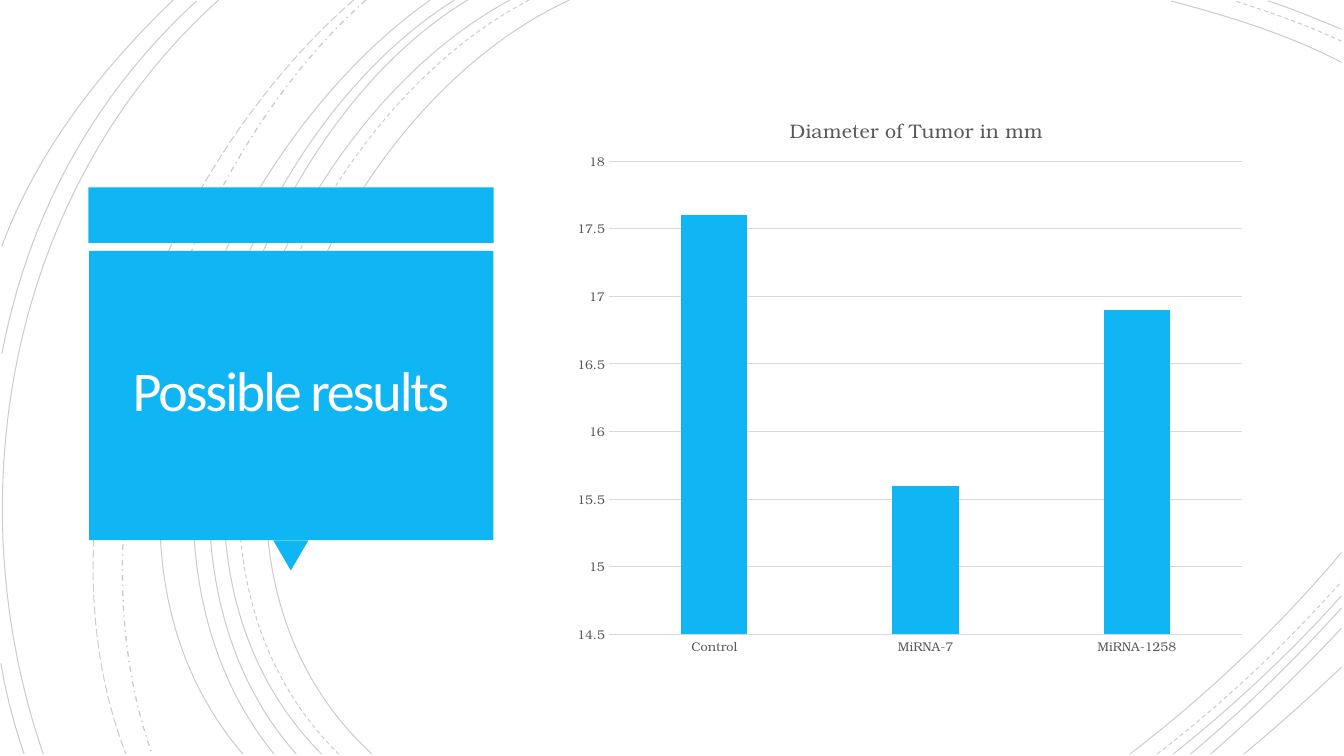
"""Build the slide on possible results with a tumor diameter chart."""
from dataclasses import dataclass
from lxml import etree
from pptx import Presentation
from pptx import util as u
from pptx.chart.data import CategoryChartData
from pptx.dml.color import RGBColor
from pptx.enum import chart as ch, dml, shapes, text
from pptx.oxml.ns import qn


@dataclass
class Theme:
    blue: str = "10B6F4"
    white: str = "FFFEFF"
    gray: str = "595959"
    grid: str = "D9D9D9"
    arc: str = "000000"
    head: str = "Calibri"
    body: str = "TeX Gyre Bonum"
    big: float = 40
    mid: float = 14
    small: float = 9
    thin: float = 0.75


T = Theme()
TITLE = "Possible results"
HEAD = "Diameter of Tumor in mm"
CATS = ["Control", "MiRNA-7", "MiRNA-1258"]
VALS = [17.6, 15.6, 16.9]
SOLID, DASH = dml.MSO_LINE.SOLID, dml.MSO_LINE.DASH
LONG, DOT = dml.MSO_LINE.LONG_DASH, dml.MSO_LINE.DASH_DOT
BASE, EDGE, TOP = 538.6, 958.3, 0.7

LEFT = [
    (406.8, 226.8, 82.8, 103, 388.8, 265.7, SOLID),
    (378, 205.2, 90, 88.6, 386.6, 241.9, DASH),
    (364.3, 194.4, 91.4, 79.2, 386.6, 229.7, SOLID),
    (334.1, 175.7, 95.8, 79.2, 389.5, 211.7, SOLID),
    (324.7, 166.3, 99.4, 69.8, 383.8, 195.8, SOLID),
    (307.4, 156.2, 105.8, 38.2, 380.9, 173.5, SOLID),
    (261.4, 126.7, 119.5, 46.8, 366.5, 108.7, DOT),
    (252.7, 113, 121.7, 20.9, 359.3, 90, LONG),
    (156.2, 7.9, 133.2, -33.1, 352.8, 31, SOLID),
]
UPPER = [
    (44.6, 920.2, 24.5, 877, 11.5, 836.6, SOLID),
    (29.5, 933.8, 18, 907.2, 8.6, 882, DASH),
    (20.9, 941, 13.7, 923.8, 6.5, 905.8, SOLID),
]
LOWER = [
    (807.1, 861.8, 496.8, 913.7, 447.8, 394.6, SOLID),
    (826.6, 873.4, 502.6, 918, 460.8, 415.4, DASH),
    (838.1, 880.6, 504.7, 921.6, 466.6, 425.5, SOLID),
    (850.3, 888.5, 506.9, 924.5, 471.6, 434.2, SOLID),
    (864.7, 897.1, 510.5, 928.8, 480.2, 448.6, SOLID),
    (888.5, 912.2, 519.1, 935.3, 498.2, 476.6, SOLID),
]
SIDE = [
    (140.4, TOP, 66.2, 69.1, 20.2, 154.1, 1.4, 252.7, SOLID),
    (0.7, 473.8, 4.3, 496.1, 10.1, 517.7, 17.3, BASE, SOLID),
    (123.8, 0, 72, 49.7, 26.6, 108, 1.4, 175.7, SOLID),
]
ARCS = (
    [(a, 0, *mid, b, BASE, dash) for a, *mid, b, dash in LEFT]
    + [(EDGE, a, *mid, b, TOP, dash) for a, *mid, b, dash in UPPER]
    + [(a, BASE, *mid, EDGE, b, dash) for a, *mid, b, dash in LOWER]
    + SIDE
)
RECT, TRI = shapes.MSO_SHAPE.RECTANGLE, shapes.MSO_SHAPE.ISOSCELES_TRIANGLE
BLOCKS = [
    (RECT, 63.2, 133.9, 289.4, 39.6, 0),
    (TRI, 195.1, 385.9, 25.2, 21.6, 180),
    (RECT, 63.6, 179.3, 288.9, 206.6, 0),
]


def rgb(name):
    return RGBColor.from_string(name)


def box(*nums):
    return [u.Pt(n) for n in nums]


def style(font, face, size, color):
    font.name, font.size, font.bold = face, u.Pt(size), False
    font.color.rgb = rgb(color)


def add_arc(slide, *nums, dash):
    pts = [box(*nums[i:i + 2]) for i in range(0, 8, 2)]
    form = slide.shapes.build_freeform(*pts[0])
    form.add_line_segments(pts[1:], close=False)
    arc = form.convert_to_shape()
    arc.shadow.inherit = False
    arc.fill.background()
    arc.line.width = u.Pt(1 if dash == DOT else T.thin)
    arc.line.color.rgb = rgb(T.arc)
    arc.line.dash_style = dash
    root = arc._element
    tint = root.find(".//" + qn("a:ln")).find(".//" + qn("a:srgbClr"))
    etree.SubElement(tint, qn("a:alpha"), val="20000")
    track = root.find(".//" + qn("a:path"))
    curve = etree.SubElement(track, qn("a:cubicBezTo"))
    for step in track.findall(qn("a:lnTo")):
        curve.append(step[0])
        track.remove(step)


def add_block(slide, kind, *nums, turn):
    block = slide.shapes.add_shape(kind, *box(*nums))
    block.rotation = turn
    block.shadow.inherit = False
    block.fill.solid()
    block.fill.fore_color.rgb = rgb(T.blue)
    block.line.fill.background()


def set_title(slide):
    title = slide.shapes.title
    title.left, title.top, title.width, title.height = box(69.8, 185, 275.8, 193.7)
    frame = title.text_frame
    frame.text = TITLE
    frame.word_wrap = True
    frame.auto_size = text.MSO_AUTO_SIZE.NONE
    frame.vertical_anchor = text.MSO_ANCHOR.MIDDLE
    for side in ("left", "right", "top", "bottom"):
        setattr(frame, "margin_" + side, u.Pt(18))
    para = frame.paragraphs[0]
    para.alignment, para.line_spacing = text.PP_ALIGN.CENTER, 0.85
    style(para.font, T.head, T.big, T.white)
    para.runs[0]._r.get_or_add_rPr().set("spc", "-150")
    slide.shapes._spTree.append(title._element)


def set_lay(node, spot, **parts):
    for old in node.findall(qn("c:layout")):
        node.remove(old)
    lay = etree.Element(qn("c:layout"))
    man = etree.SubElement(lay, qn("c:manualLayout"))
    for tag, val in parts.items():
        etree.SubElement(man, qn("c:" + tag), val=str(val))
    node.insert(spot, lay)


def add_graph(slide):
    data = CategoryChartData()
    data.categories = CATS
    data.add_series("Series 1", VALS)
    kind = ch.XL_CHART_TYPE.COLUMN_CLUSTERED
    graph = slide.shapes.add_chart(kind, *box(403.2, 63.4, 494.6, 413.3), data).chart
    graph.has_legend = False
    graph.font.name, graph.font.size = T.body, u.Pt(10)
    graph.has_title = True
    head = graph.chart_title
    head.text_frame.text = HEAD
    style(head.text_frame.paragraphs[0].font, T.body, T.mid, T.gray)
    set_lay(head._element, 1, xMode="edge", yMode="edge", x=0.32, y=0.04)
    area = graph._chartSpace.find(".//" + qn("c:plotArea"))
    set_lay(area, 0, layoutTarget="inner", xMode="edge", yMode="edge",
            x=0.064, y=0.125, w=0.915, h=0.818)
    plot = graph.plots[0]
    plot.gap_width, plot.overlap, plot.vary_by_categories = 219, -27, False
    fill = plot.series[0].format.fill
    fill.solid()
    fill.fore_color.rgb = rgb(T.blue)
    cat, val = graph.category_axis, graph.value_axis
    for axis in (cat, val):
        axis.major_tick_mark = axis.minor_tick_mark = ch.XL_TICK_MARK.NONE
        style(axis.tick_labels.font, T.body, T.small, T.gray)
    val.minimum_scale, val.maximum_scale, val.major_unit = 14.5, 18, 0.5
    val.has_major_gridlines = True
    val.format.line.fill.background()
    for line in (cat.format.line, val.major_gridlines.format.line):
        line.width, line.color.rgb = u.Pt(T.thin), rgb(T.grid)


def main():
    deck = Presentation()
    deck.slide_width, deck.slide_height = box(960, 540)
    slide = deck.slides.add_slide(deck.slide_layouts[5])
    for *nums, dash in ARCS:
        add_arc(slide, *nums, dash=dash)
    for *nums, turn in BLOCKS:
        add_block(slide, *nums, turn=turn)
    set_title(slide)
    add_graph(slide)
    deck.save("out.pptx")


if __name__ == "__main__":
    main()
